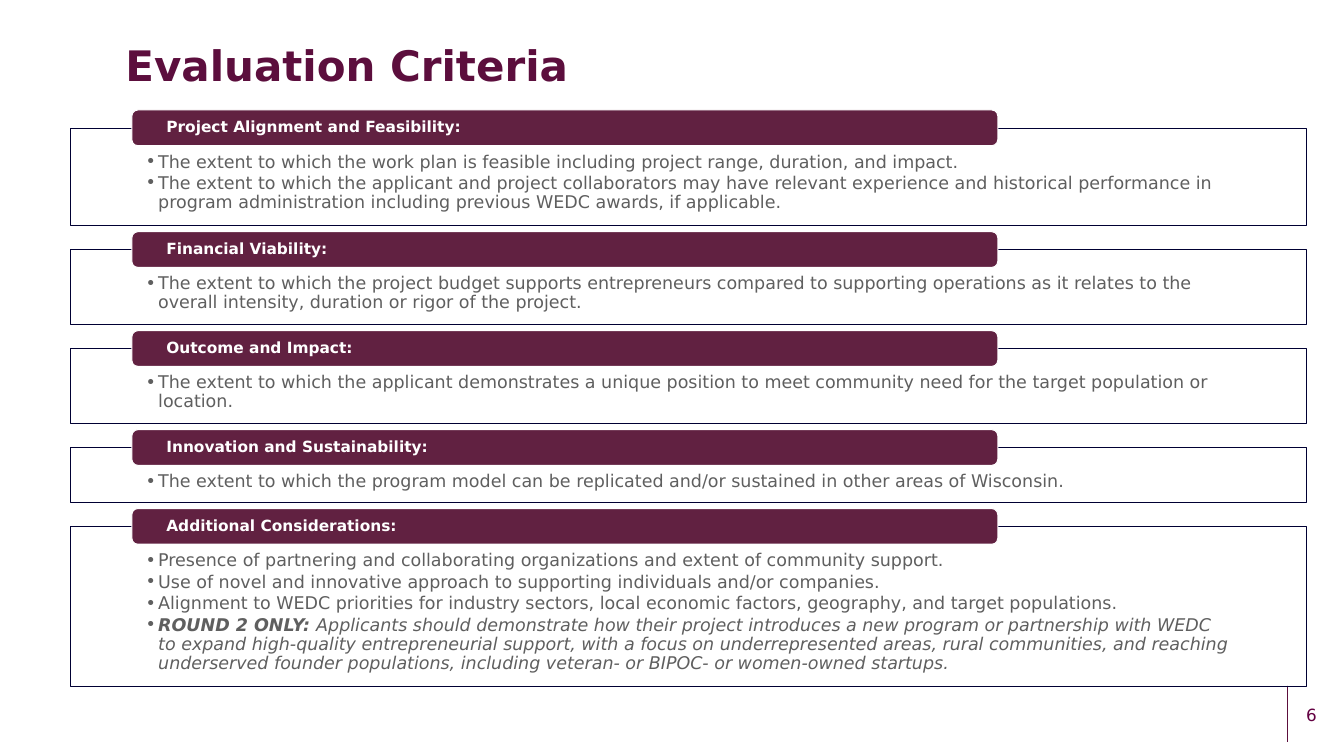
from lxml.etree import SubElement
from pptx import Presentation
from pptx.dml.color import RGBColor
from pptx.enum.shapes import MSO_CONNECTOR, MSO_SHAPE
from pptx.enum.text import MSO_ANCHOR, PP_ALIGN
from pptx.oxml.ns import qn
from pptx.util import Pt

TITLE = "Evaluation Criteria"
PAGE_NUMBER = "6"
ROUND_LABEL = "ROUND 2 ONLY: "

# heading, box height, bullets
CRITERIA = [
    ("Project Alignment and Feasibility:", 139, [
        "The extent to which the work plan is feasible including project range, duration, and impact.",
        "The extent to which the applicant and project collaborators may have relevant experience and "
        "historical performance in program administration including previous WEDC awards, if applicable.",
    ]),
    ("Financial Viability:", 106.5, [
        "The extent to which the project budget supports entrepreneurs compared to supporting operations "
        "as it relates to the overall intensity, duration or rigor of the project.",
    ]),
    ("Outcome and Impact:", 106.5, [
        "The extent to which the applicant demonstrates a unique position to meet community need for the "
        "target population or location.",
    ]),
    ("Innovation and Sustainability:", 77.8, [
        "The extent to which the program model can be replicated and/or sustained in other areas of "
        "Wisconsin.",
    ]),
    ("Additional Considerations:", 229, [
        "Presence of partnering and collaborating organizations and extent of community support.",
        "Use of novel and innovative approach to supporting individuals and/or companies.",
        "Alignment to WEDC priorities for industry sectors, local economic factors, geography, and target "
        "populations.",
        ROUND_LABEL + "Applicants should demonstrate how their project introduces a new program or "
        "partnership with WEDC to expand high-quality entrepreneurial support, with a focus on "
        "underrepresented areas, rural communities, and reaching underserved founder populations, "
        "including veteran- or BIPOC- or women-owned startups.",
    ]),
]

FONT = "DejaVu Sans"
WHITE, NAVY, PLUM, WINE, GREY, NUMBER = "FFFFFF", "000033", "612141", "5C0E3D", "5F5F5F", "630042"
BOX_LEFT, BOX_WIDTH, FIRST_TOP, GAP = 100, 1766.5, 182.7, 34.9
TAB_LEFT, TAB_WIDTH, TAB_HEIGHT, TAB_RISE = 188.4, 1237, 51, 25.6
FOOTER_LEFT = 1839


def color(value):
    return RGBColor.from_string(value)


def style_font(font, size, value, bold=False, italic=False):
    font.name, font.size, font.bold, font.italic = FONT, Pt(size), bold, italic
    font.color.rgb = color(value)


def set_frame(frame, anchor, left=0, top=0, right=0, bottom=0):
    frame.word_wrap, frame.vertical_anchor = True, anchor
    frame.margin_left, frame.margin_top = Pt(left), Pt(top)
    frame.margin_right, frame.margin_bottom = Pt(right), Pt(bottom)


def place(shape, left, top, width, height):
    shape.left, shape.top, shape.width, shape.height = Pt(left), Pt(top), Pt(width), Pt(height)


def add_panel(slide, kind, area, fill, line, line_width):
    panel = slide.shapes.add_shape(kind, *map(Pt, area))
    panel.shadow.inherit = False
    panel.fill.solid()
    panel.fill.fore_color.rgb = color(fill)
    panel.line.color.rgb = color(line)
    panel.line.width = Pt(line_width)
    return panel


def add_bullet(para):
    properties = para._p.get_or_add_pPr()
    properties.set("marL", str(Pt(18)))
    properties.set("indent", str(-Pt(18)))
    SubElement(properties, qn("a:buFont"), typeface=FONT)
    SubElement(properties, qn("a:buChar"), char="•")


def fill_bullets(frame, bullets):
    for index, bullet in enumerate(bullets):
        para = frame.paragraphs[0] if index == 0 else frame.add_paragraph()
        add_bullet(para)
        para.alignment = PP_ALIGN.LEFT
        para.line_spacing, para.space_after = 0.9, Pt(3.75)
        special = bullet.startswith(ROUND_LABEL)
        parts = [ROUND_LABEL, bullet.removeprefix(ROUND_LABEL)] if special else [bullet]
        for part in parts:
            span = para.add_run()
            span.text = part
            style_font(span.font, 25, GREY, part == ROUND_LABEL, special)


def add_criterion(slide, top, heading, height, bullets):
    box = add_panel(slide, MSO_SHAPE.RECTANGLE, (BOX_LEFT, top, BOX_WIDTH, height), WHITE, NAVY, 1)
    fill_color = box.fill._xPr.find(qn("a:solidFill"))[0]
    SubElement(fill_color, qn("a:alpha"), val="90000")
    set_frame(box.text_frame, MSO_ANCHOR.TOP, 108, 36, 108, 13.5)
    fill_bullets(box.text_frame, bullets)

    tab = add_panel(slide, MSO_SHAPE.ROUNDED_RECTANGLE,
                    (TAB_LEFT, top - TAB_RISE, TAB_WIDTH, TAB_HEIGHT), PLUM, WHITE, 1.5)
    set_frame(tab.text_frame, MSO_ANCHOR.MIDDLE, 46.8, 0, 46.8)
    tab.text_frame.text = heading
    para = tab.text_frame.paragraphs[0]
    para.alignment, para.line_spacing = PP_ALIGN.LEFT, 0.9
    style_font(para.runs[0].font, 22, WHITE, bold=True)


def add_title(slide):
    title = slide.shapes.title
    place(title, 172, 53.3, 1635, 85)
    set_frame(title.text_frame, MSO_ANCHOR.TOP, 7.2, 3.6, 7.2, 3.6)
    title.text_frame.text = TITLE
    para = title.text_frame.paragraphs[0]
    para.alignment = PP_ALIGN.LEFT
    style_font(para.runs[0].font, 60, WINE, bold=True)


def add_footer(slide):
    rule = slide.shapes.add_connector(MSO_CONNECTOR.STRAIGHT, Pt(FOOTER_LEFT), Pt(979),
                                      Pt(FOOTER_LEFT), Pt(1060))
    rule.line.color.rgb = color(WINE)
    rule.line.width = Pt(1)
    SubElement(rule._element.spPr, qn("a:effectLst"))

    number = slide.shapes.add_textbox(Pt(FOOTER_LEFT), Pt(992), Pt(69), Pt(58))
    set_frame(number.text_frame, MSO_ANCHOR.MIDDLE, 7.2, 3.6, 7.2, 3.6)
    number.text_frame.text = PAGE_NUMBER
    para = number.text_frame.paragraphs[0]
    para.alignment = PP_ALIGN.CENTER
    style_font(para.runs[0].font, 24, NUMBER)


def main():
    deck = Presentation()
    deck.slide_width, deck.slide_height = Pt(1920), Pt(1080)
    slide = deck.slides.add_slide(deck.slide_layouts[5])
    add_title(slide)
    add_footer(slide)
    top = FIRST_TOP
    for heading, height, bullets in CRITERIA:
        add_criterion(slide, top, heading, height, bullets)
        top += height + GAP
    deck.save("out.pptx")


if __name__ == "__main__":
    main()
